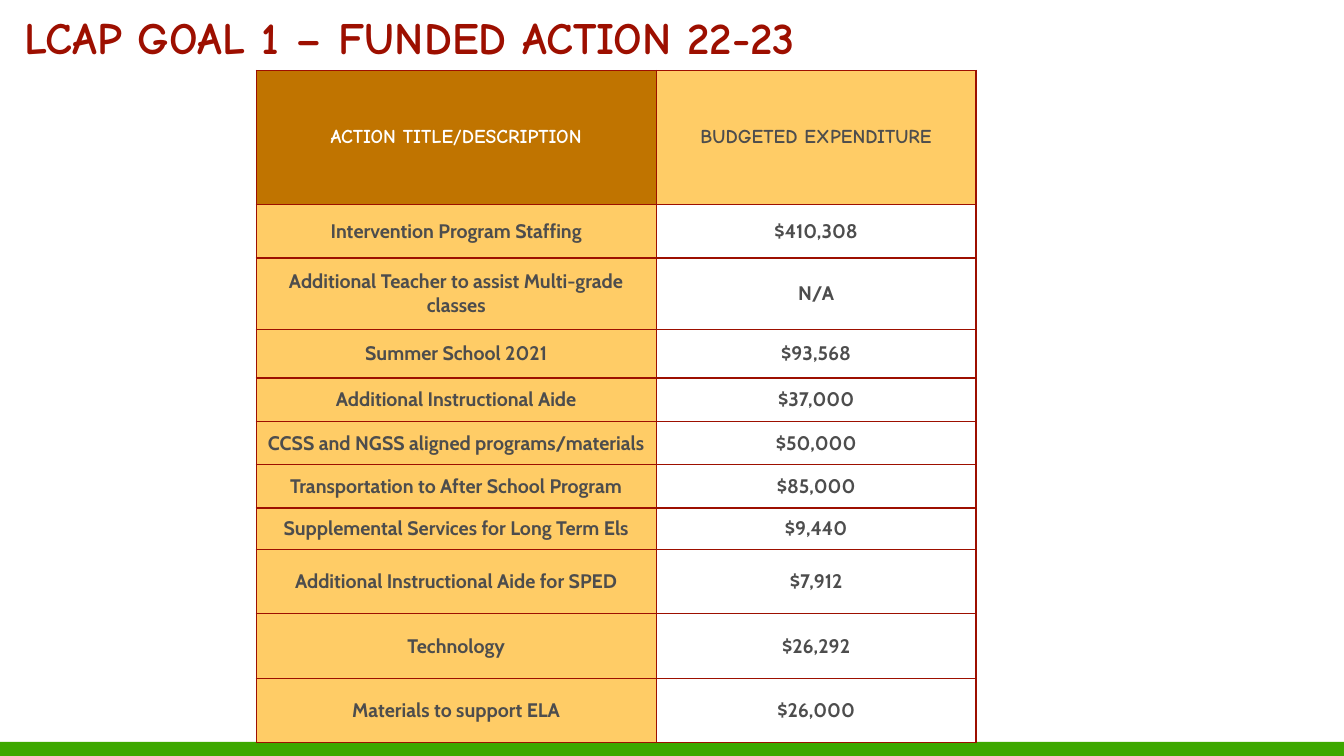
from dataclasses import dataclass

from lxml import etree
from pptx import Presentation
from pptx.dml.color import RGBColor
from pptx.enum.shapes import MSO_SHAPE
from pptx.enum.text import MSO_ANCHOR, MSO_AUTO_SIZE, PP_ALIGN
from pptx.oxml.ns import qn
from pptx.table import _Cell
from pptx.text.text import TextFrame
from pptx.util import Inches, Pt

RECT = MSO_SHAPE.RECTANGLE
TOP, MIDDLE = MSO_ANCHOR.TOP, MSO_ANCHOR.MIDDLE
LEFT, CENTER = PP_ALIGN.LEFT, PP_ALIGN.CENTER
NO_FIT = MSO_AUTO_SIZE.NONE

RED = RGBColor(0x9D, 0x0F, 0x00)
GREEN = RGBColor(0x3D, 0xA8, 0x00)
BROWN = RGBColor(0xC0, 0x74, 0x00)
GOLD = RGBColor(0xFF, 0xCC, 0x66)
GRAY = RGBColor(0x4D, 0x4D, 0x4D)
WHITE = RGBColor(0xFF, 0xFF, 0xFF)

HEAD_FONT = "Comic Neue"
BODY_FONT = "Cabin"


@dataclass
class Action:
    title: str
    budget: str
    height: float


HEADER = Action("ACTION TITLE/DESCRIPTION", "BUDGETED EXPENDITURE", 1.33)
ACTIONS = [
    Action("Intervention Program Staffing", "$410,308", 0.53),
    Action("Additional Teacher to assist Multi-grade classes", "N/A", 0.71),
    Action("Summer School 2021", "$93,568", 0.48),
    Action("Additional Instructional Aide", "$37,000", 0.43),
    Action("CCSS and NGSS aligned programs/materials", "$50,000", 0.43),
    Action("Transportation to After School Program", "$85,000", 0.43),
    Action("Supplemental Services for Long Term Els", "$9,440", 0.41),
    Action("Additional Instructional Aide for SPED", "$7,912", 0.64),
    Action("Technology", "$26,292", 0.64),
    Action("Materials to support ELA", "$26,000", 0.64),
]
WIDTHS = (3.97, 3.17)


def write(frame: TextFrame, text: str, *, font: str = BODY_FONT, size: float = 14,
          color: RGBColor = GRAY, align: PP_ALIGN = CENTER,
          spacing: float = 1.0) -> None:
    para = frame.paragraphs[0]
    para.alignment = align
    para.line_spacing = spacing
    run = para.add_run()
    run.text = text
    run.font.name = font
    run.font.size = Pt(size)
    run.font.bold = True
    run.font.color.rgb = color


def outline(cell: _Cell) -> None:
    """Put a thin red border on all four sides, ahead of the cell's fill."""
    props = cell._tc.get_or_add_tcPr()
    for index, side in enumerate(("lnL", "lnR", "lnT", "lnB")):
        line = etree.Element(qn(f"a:{side}"), w=str(Pt(1)))
        fill = etree.SubElement(line, qn("a:solidFill"))
        etree.SubElement(fill, qn("a:srgbClr"), val=str(RED))
        props.insert(index, line)


def main() -> None:
    deck = Presentation()
    deck.slide_width, deck.slide_height = Inches(13.33), Inches(7.5)
    slide = deck.slides.add_slide(deck.slide_layouts[5])
    shapes = slide.shapes

    band = shapes.add_shape(RECT, 0, Inches(7.36), Inches(13.33), Inches(0.14))
    band.shadow.inherit = False
    band.fill.solid()
    band.fill.fore_color.rgb = GREEN
    band.line.fill.background()

    rows = [HEADER, *ACTIONS]
    grid = shapes.add_table(
        len(rows), len(WIDTHS), Inches(2.54), Inches(0.7),
        Inches(sum(WIDTHS)), Inches(sum(row.height for row in rows))).table
    for col, width in zip(grid.columns, WIDTHS):
        col.width = Inches(width)
    for r, row in enumerate(rows):
        grid.rows[r].height = Inches(row.height)
        head = row is HEADER
        fills = (BROWN, GOLD) if head else (GOLD, WHITE)
        for c, (text, fill) in enumerate(zip((row.title, row.budget), fills)):
            cell = grid.cell(r, c)
            cell.vertical_anchor = MIDDLE
            cell.fill.solid()
            cell.fill.fore_color.rgb = fill
            outline(cell)
            write(cell.text_frame, text, font=HEAD_FONT if head else BODY_FONT,
                  color=WHITE if fill == BROWN else GRAY)

    title = shapes.title
    title.left, title.top = Inches(0.14), Inches(0.06)
    title.width, title.height = Inches(12.42), Inches(1.03)
    frame = title.text_frame
    frame.word_wrap = True
    frame.auto_size = NO_FIT
    frame.vertical_anchor = TOP
    frame.margin_left = frame.margin_right = Inches(0.1)
    frame.margin_top = frame.margin_bottom = Inches(0.1)
    write(frame, "LCAP GOAL 1 – FUNDED ACTION 22-23", font=HEAD_FONT, size=32,
          color=RED, align=LEFT, spacing=0.9)
    shapes._spTree.append(title._element)

    deck.save("out.pptx")


if __name__ == "__main__":
    main()
